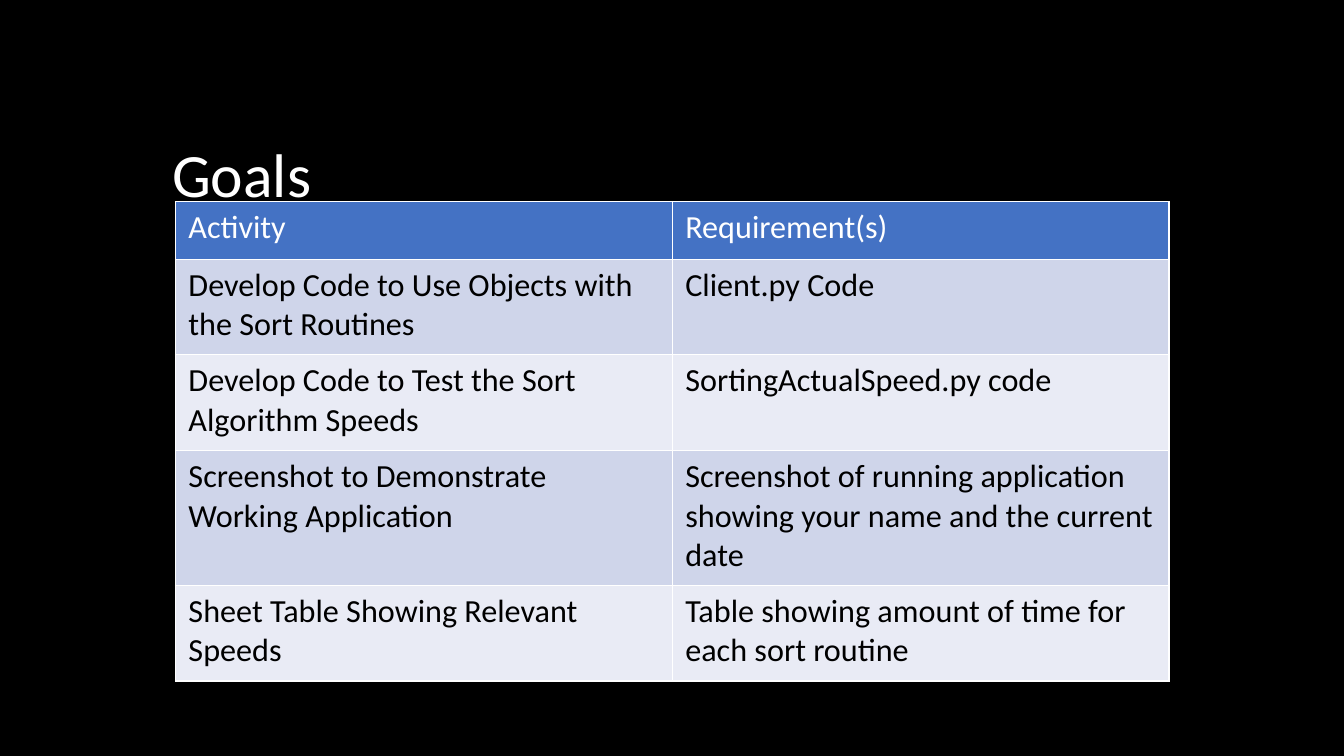
"""Build the Goals slide with its table of activities and requirements."""
from dataclasses import dataclass

from pptx import Presentation
from pptx.dml.color import RGBColor
from pptx.enum.text import MSO_VERTICAL_ANCHOR as Anchor
from pptx.oxml import parse_xml
from pptx.oxml.ns import nsdecls
from pptx.slide import Slide
from pptx.table import _Cell as Cell
from pptx.text.text import _Paragraph as Paragraph
from pptx.util import Cm, Pt

FONT = "Calibri"
WHITE, BLACK = "FFFFFF", "000000"
HEADER, DARK_BAND, LIGHT_BAND = "4472C4", "CFD5EA", "E9EBF5"
COLUMN_WIDTH = 12.52


@dataclass(frozen=True)
class Goal:
    activity: str
    requirement: str
    height: float
    fill: str
    color: str = BLACK


GOALS = [
    Goal("Activity", "Requirement(s)", 1.45, HEADER, WHITE),
    Goal("Develop Code to Use Objects with the Sort Routines",
         "Client.py Code", 2.41, DARK_BAND),
    Goal("Develop Code to Test the Sort Algorithm Speeds",
         "SortingActualSpeed.py code", 2.41, LIGHT_BAND),
    Goal("Screenshot to Demonstrate Working Application",
         "Screenshot of running application showing your name and the current date",
         3.4, DARK_BAND),
    Goal("Sheet Table Showing Relevant Speeds",
         "Table showing amount of time for each sort routine", 2.41, LIGHT_BAND),
]


def rgb(value: str) -> RGBColor:
    return RGBColor.from_string(value)


def add_span(para: Paragraph, text: str, size: float, color: str) -> None:
    span = para.add_run()
    span.text = text
    span.font.name = FONT
    span.font.size = Pt(size)
    span.font.color.rgb = rgb(color)


def add_title(page: Slide, text: str) -> None:
    box = page.shapes.add_textbox(Cm(4.09), Cm(2.64), Cm(5.18), Cm(3.68))
    frame = box.text_frame
    frame.word_wrap = True
    frame.vertical_anchor = Anchor.MIDDLE
    para = frame.paragraphs[0]
    para.line_spacing = 0.9
    add_span(para, text, 44, WHITE)


def add_borders(cell: Cell, color: str, width: float) -> None:
    properties = cell._tc.get_or_add_tcPr()
    for index, side in enumerate("LRTB"):
        properties.insert(index, parse_xml(
            f'<a:ln{side} {nsdecls("a")} w="{Pt(width)}"><a:solidFill>'
            f'<a:srgbClr val="{color}"/></a:solidFill></a:ln{side}>'))


def fill_cell(cell: Cell, text: str, goal: Goal) -> None:
    cell.margin_left = cell.margin_right = Cm(0.33)
    cell.margin_top = cell.margin_bottom = Cm(0.16)
    cell.fill.solid()
    cell.fill.fore_color.rgb = rgb(goal.fill)
    add_borders(cell, WHITE, 1)
    add_span(cell.text_frame.paragraphs[0], text, 23, goal.color)


def add_goals(page: Slide, goals: list[Goal]) -> None:
    height = sum(goal.height for goal in goals)
    table = page.shapes.add_table(len(goals), 2, Cm(4.42), Cm(5.08),
                                  Cm(2 * COLUMN_WIDTH), Cm(height)).table
    for column in table.columns:
        column.width = Cm(COLUMN_WIDTH)
    for row, goal in zip(table.rows, goals):
        row.height = Cm(goal.height)
        for cell, text in zip(row.cells, (goal.activity, goal.requirement)):
            fill_cell(cell, text, goal)


def main() -> None:
    deck = Presentation()
    deck.slide_width, deck.slide_height = Cm(33.87), Cm(19.05)
    page = deck.slides.add_slide(deck.slide_layouts[6])
    page.background.fill.solid()
    page.background.fill.fore_color.rgb = rgb(BLACK)
    add_title(page, "Goals")
    add_goals(page, GOALS)
    deck.save("out.pptx")


if __name__ == "__main__":
    main()
